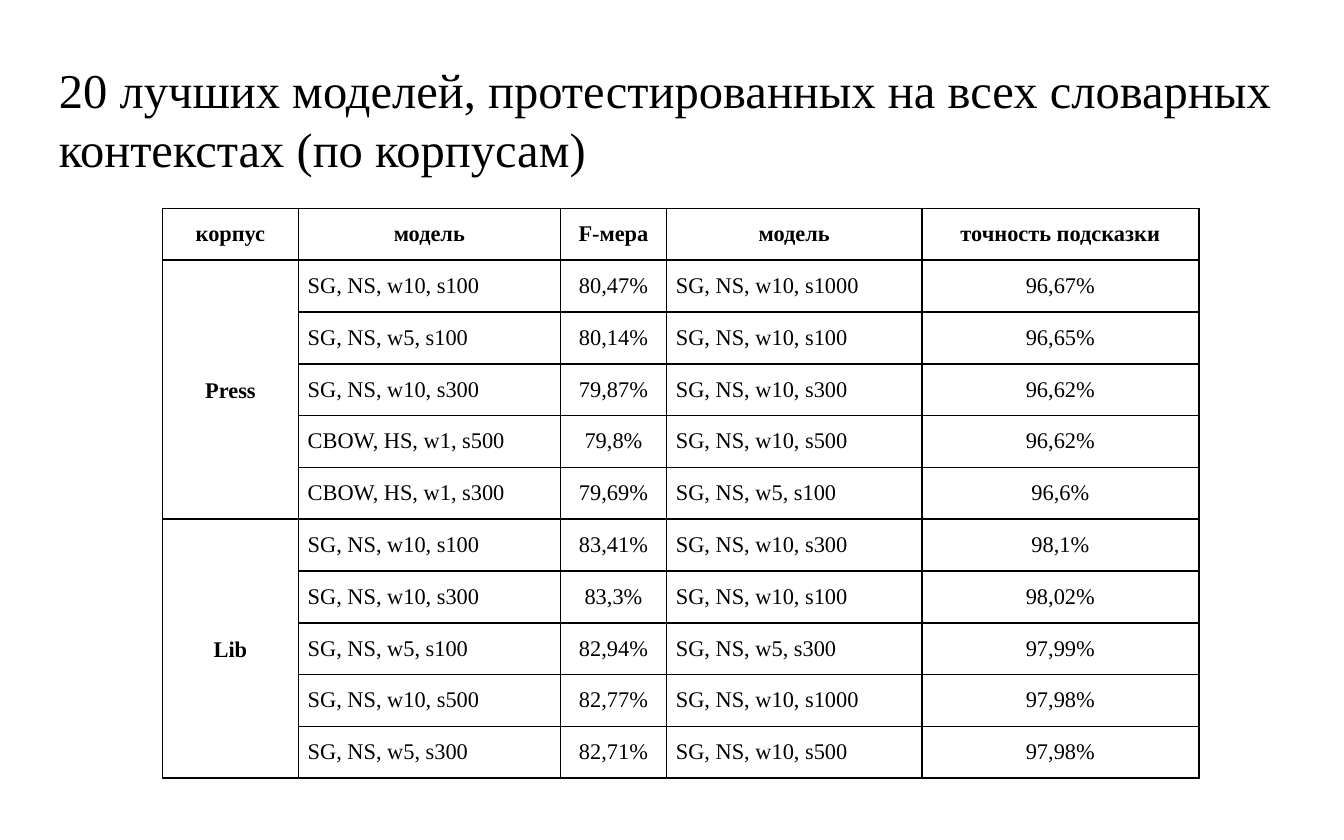
from typing import NamedTuple

from lxml import etree
from pptx import Presentation
from pptx.dml.color import RGBColor
from pptx.enum.text import MSO_ANCHOR, PP_ALIGN
from pptx.oxml.ns import qn
from pptx.slide import Slide
from pptx.table import Table, _Cell
from pptx.text.text import _Paragraph
from pptx.util import Inches, Pt

BLACK = RGBColor(0, 0, 0)
FONT = "Times New Roman"
LEFT, CENTER = PP_ALIGN.LEFT, PP_ALIGN.CENTER
TOP, MIDDLE = MSO_ANCHOR.TOP, MSO_ANCHOR.MIDDLE
TITLE = "20 лучших моделей, протестированных на всех словарных контекстах (по корпусам)"
HEIGHT = 4.24


class Column(NamedTuple):
    head: str
    width: float
    align: PP_ALIGN


class Score(NamedTuple):
    model: str
    measure: str
    rival: str
    hint: str


class Corpus(NamedTuple):
    name: str
    scores: list[Score]


COLUMNS = [
    Column("корпус", 1.01, CENTER),
    Column("модель", 1.95, LEFT),
    Column("F-мера", 0.79, CENTER),
    Column("модель", 1.9, LEFT),
    Column("точность подсказки", 2.06, CENTER),
]
GROUPS = [
    Corpus("Press", [
        Score("SG, NS, w10, s100", "80,47%", "SG, NS, w10, s1000", "96,67%"),
        Score("SG, NS, w5, s100", "80,14%", "SG, NS, w10, s100", "96,65%"),
        Score("SG, NS, w10, s300", "79,87%", "SG, NS, w10, s300", "96,62%"),
        Score("CBOW, HS, w1, s500", "79,8%", "SG, NS, w10, s500", "96,62%"),
        Score("CBOW, HS, w1, s300", "79,69%", "SG, NS, w5, s100", "96,6%"),
    ]),
    Corpus("Lib", [
        Score("SG, NS, w10, s100", "83,41%", "SG, NS, w10, s300", "98,1%"),
        Score("SG, NS, w10, s300", "83,3%", "SG, NS, w10, s100", "98,02%"),
        Score("SG, NS, w5, s100", "82,94%", "SG, NS, w5, s300", "97,99%"),
        Score("SG, NS, w10, s500", "82,77%", "SG, NS, w10, s1000", "97,98%"),
        Score("SG, NS, w5, s300", "82,71%", "SG, NS, w10, s500", "97,98%"),
    ]),
]


def add_run(para: _Paragraph, text: str, size: int, bold: bool = False) -> None:
    run = para.add_run()
    run.text = text
    run.font.name = FONT
    run.font.size = Pt(size)
    run.font.bold = bold
    run.font.color.rgb = BLACK


def add_title(slide: Slide) -> None:
    box = slide.shapes.add_textbox(Inches(0.34), Inches(0.35), Inches(9.32), Inches(0.7))
    frame = box.text_frame
    frame.word_wrap = True
    frame.vertical_anchor = TOP
    frame.margin_left = frame.margin_right = Inches(0.1)
    frame.margin_top = frame.margin_bottom = Inches(0.1)
    add_run(frame.paragraphs[0], TITLE, 26)


def style_cell(cell: _Cell) -> None:
    cell.margin_left = cell.margin_right = Inches(0.07)
    cell.margin_top = Inches(0.1)
    cell.margin_bottom = Inches(0.08)
    props = cell._tc.get_or_add_tcPr()
    for side in ("a:lnL", "a:lnR", "a:lnT", "a:lnB"):
        line = etree.SubElement(props, qn(side), w=str(Pt(1)))
        fill = etree.SubElement(line, qn("a:solidFill"))
        etree.SubElement(fill, qn("a:srgbClr"), val=str(BLACK))
    cell.fill.background()


def fill_cell(cell: _Cell, text: str, align: PP_ALIGN, bold: bool = False) -> None:
    para = cell.text_frame.paragraphs[0]
    para.alignment = align
    add_run(para, text, 12, bold)


def fill_group(table: Table, group: Corpus, start: int) -> None:
    name = table.cell(start, 0)
    name.merge(table.cell(start + len(group.scores) - 1, 0))
    name.vertical_anchor = MIDDLE
    fill_cell(name, group.name, CENTER, True)
    for row, score in enumerate(group.scores, start):
        for col, text in enumerate(score, 1):
            fill_cell(table.cell(row, col), text, COLUMNS[col].align)


def add_scores(slide: Slide) -> None:
    count = 1 + sum(len(group.scores) for group in GROUPS)
    width = sum(col.width for col in COLUMNS)
    frame = slide.shapes.add_table(
        count, len(COLUMNS), Inches(1.21), Inches(1.55), Inches(width), Inches(HEIGHT)
    )
    table = frame.table
    table.first_row = table.horz_banding = False
    for cell in table.iter_cells():
        style_cell(cell)
    for index, col in enumerate(COLUMNS):
        table.columns[index].width = Inches(col.width)
        fill_cell(table.cell(0, index), col.head, CENTER, True)
    start = 1
    for group in GROUPS:
        fill_group(table, group, start)
        start += len(group.scores)


def main() -> None:
    deck = Presentation()
    deck.slide_width, deck.slide_height = Inches(10), Inches(6.25)
    slide = deck.slides.add_slide(deck.slide_layouts[6])
    add_title(slide)
    add_scores(slide)
    deck.save("out.pptx")


if __name__ == "__main__":
    main()
